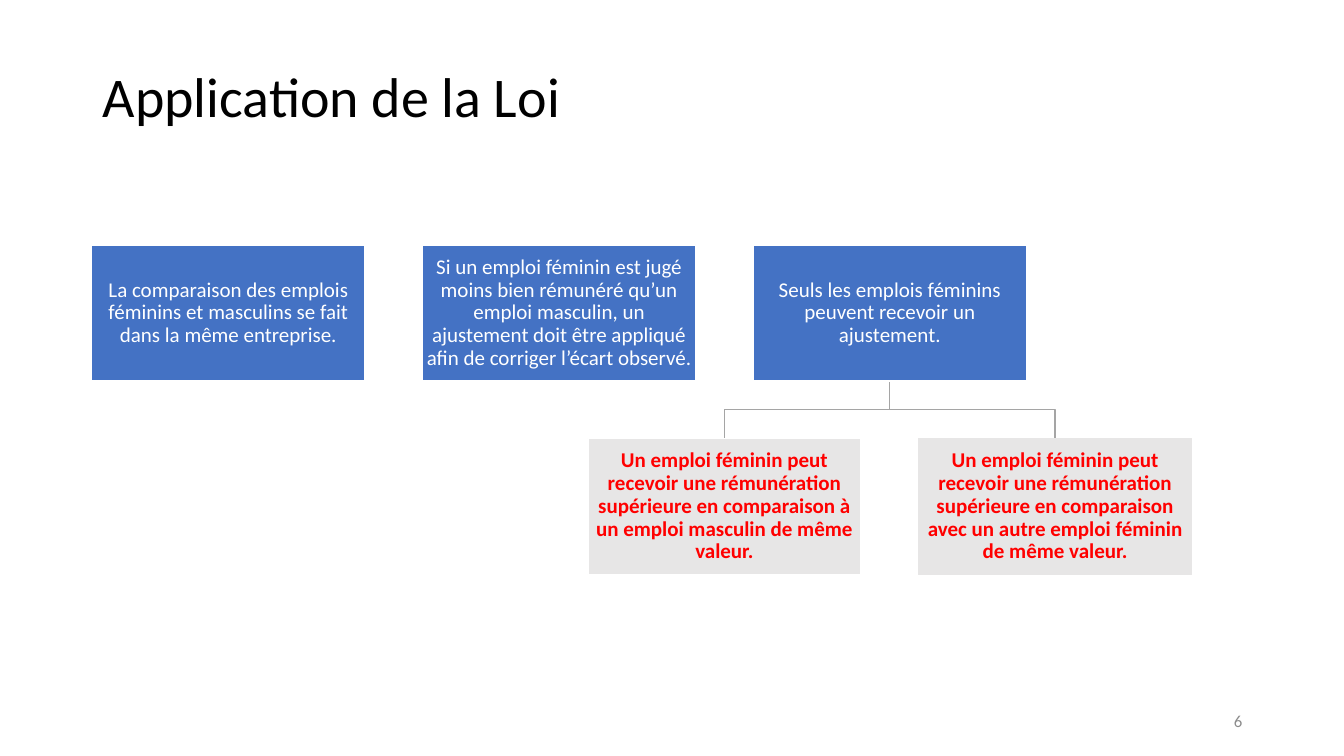
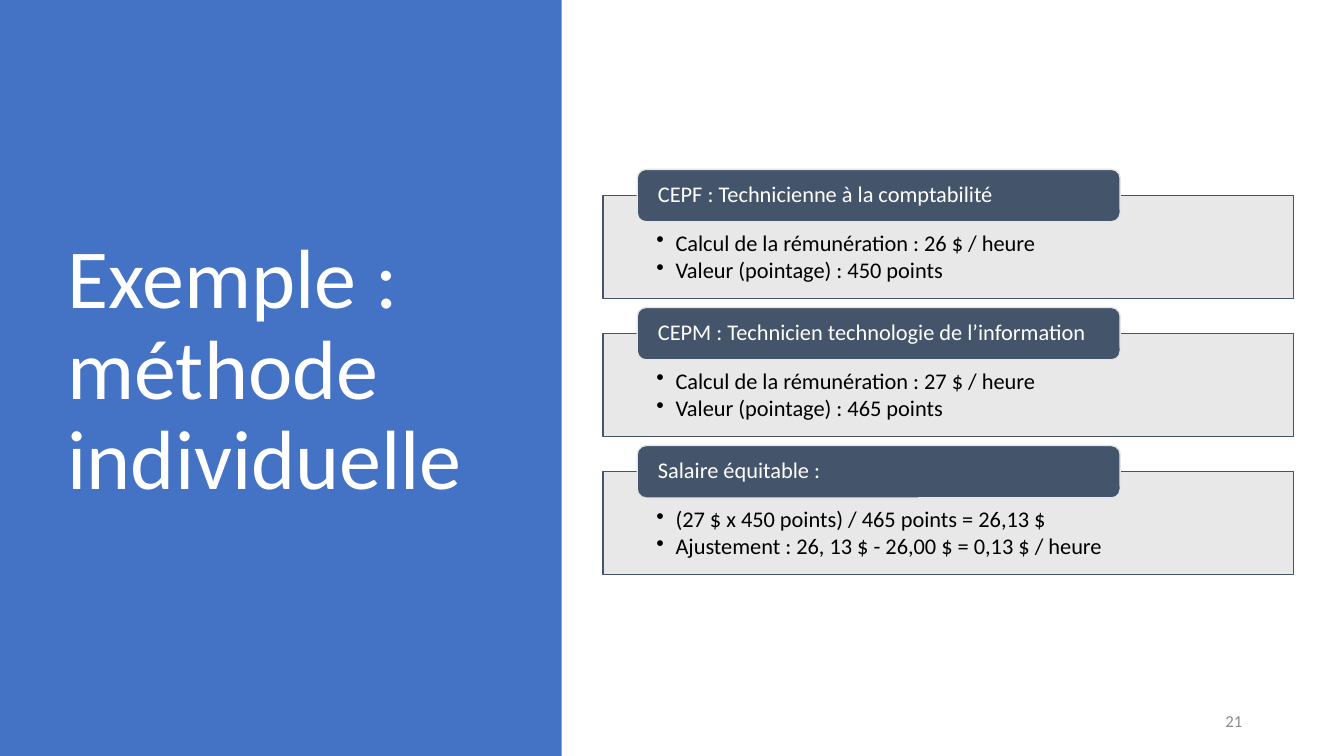
from lxml.etree import SubElement
from pptx import Presentation
from pptx.dml.color import RGBColor
from pptx.enum.shapes import MSO_SHAPE
from pptx.enum.text import MSO_ANCHOR, MSO_AUTO_SIZE, PP_ALIGN
from pptx.oxml.ns import qn
from pptx.util import Inches, Pt

BLUE = RGBColor(0x44, 0x72, 0xC4)
SLATE = RGBColor(0x44, 0x54, 0x6A)
LIGHT = RGBColor(0xE7, 0xE6, 0xE6)
GRAY = RGBColor(0xA5, 0xA5, 0xA5)
NUMBER_GRAY = RGBColor(0x8C, 0x8C, 0x8C)
RED = RGBColor(0xFF, 0x00, 0x00)
WHITE = RGBColor(0xFF, 0xFF, 0xFF)
BLACK = RGBColor(0x00, 0x00, 0x00)
FONT = "Calibri"
TITLE_ONLY = 5


def write(shape, *lines, size, color=BLACK, bold=False, align=PP_ALIGN.LEFT,
          anchor=MSO_ANCHOR.MIDDLE, insets=(0.1, 0.05, 0.1, 0.05),
          spacing=0.9, after=0, bullet=False):
    frame = shape.text_frame
    frame.word_wrap = True
    frame.auto_size = MSO_AUTO_SIZE.NONE
    frame.vertical_anchor = anchor
    (frame.margin_left, frame.margin_top,
     frame.margin_right, frame.margin_bottom) = map(Inches, insets)
    frame.text = "\n".join(lines)
    for paragraph in frame.paragraphs:
        paragraph.alignment = align
        paragraph.line_spacing = spacing
        paragraph.space_before = Pt(0)
        paragraph.space_after = Pt(after)
        font = paragraph.runs[0].font
        font.name, font.size, font.bold = FONT, Pt(size), bold
        font.color.rgb = color
        if bullet:
            properties = paragraph.runs[0].font and paragraph._p.get_or_add_pPr()
            properties.set("marL", str(Inches(0.19)))
            properties.set("indent", str(Inches(-0.19)))
            SubElement(properties, qn("a:buChar"), char="•")


class Deck:
    def __init__(self):
        self.presentation = Presentation()
        self.presentation.slide_width = Inches(13.33)
        self.presentation.slide_height = Inches(7.5)
        self.slide = None

    def new_slide(self, number):
        layout = self.presentation.slide_layouts[TITLE_ONLY]
        self.slide = self.presentation.slides.add_slide(layout)
        box = self.slide.shapes.add_textbox(*map(Inches, (9.42, 6.95, 3, 0.4)))
        write(box, str(number), size=12, color=NUMBER_GRAY,
              align=PP_ALIGN.RIGHT, spacing=1, after=6)

    def title(self, text, position, **style):
        title = self.slide.shapes.title
        title.left, title.top, title.width, title.height = map(Inches, position)
        write(title, text, **style)
        title.element.getparent().append(title.element)

    def box(self, position, fill, line=None, kind=MSO_SHAPE.RECTANGLE, opacity=100):
        shape = self.slide.shapes.add_shape(kind, *map(Inches, position))
        shape.shadow.inherit = False
        shape.fill.solid()
        shape.fill.fore_color.rgb = fill
        if opacity < 100:
            color = shape.element.spPr.find(qn("a:solidFill")).find(qn("a:srgbClr"))
            SubElement(color, qn("a:alpha"), val=str(opacity * 1000))
        if line is None:
            shape.line.fill.background()
        else:
            shape.line.color.rgb = line
            shape.line.width = Pt(1)
        return shape

    def branch(self, start_x, start_y, end_x, end_y):
        middle = (start_y + end_y) / 2
        builder = self.slide.shapes.build_freeform(
            Inches(start_x), Inches(start_y))
        corners = [(start_x, middle), (end_x, middle), (end_x, end_y)]
        builder.add_line_segments(
            [(Inches(x), Inches(y)) for x, y in corners], close=False)
        shape = builder.convert_to_shape()
        shape.shadow.inherit = False
        shape.fill.background()
        shape.line.color.rgb = GRAY
        shape.line.width = Pt(1)

    def tree_box(self, left, top, text, fill, line, **style):
        shape = self.box((left, top, 2.71, 1.35), fill, line)
        write(shape, text, size=15, align=PP_ALIGN.CENTER,
              insets=(0.01,) * 4, **style)

    def card(self, top, heading, *items):
        body = self.box((5.98, top + 0.26, 6.85, 1.02), LIGHT, SLATE, opacity=90)
        write(body, *items, size=16, anchor=MSO_ANCHOR.TOP,
              insets=(0.53, 0.36, 0.53, 0.12), after=2.4, bullet=True)
        tab = self.box((6.32, top, 4.79, 0.52), SLATE, LIGHT,
                       MSO_SHAPE.ROUNDED_RECTANGLE)
        write(tab, heading, size=16, color=WHITE, insets=(0.18, 0, 0.18, 0))


def law_slide(deck):
    deck.new_slide(6)
    deck.title("Application de la Loi", (0.92, 0.57, 11.12, 0.77),
               size=40, anchor=MSO_ANCHOR.BOTTOM)
    left, pitch, top, child_top = 0.91, 3.28, 2.43, 4.35
    rules = [
        "La comparaison des emplois féminins et masculins se fait dans la même entreprise.",
        "Si un emploi féminin est jugé moins bien rémunéré qu’un emploi masculin, "
        "un ajustement doit être appliqué afin de corriger l’écart observé.",
        "Seuls les emplois féminins peuvent recevoir un ajustement.",
    ]
    cases = [
        ("Un emploi féminin peut recevoir une rémunération supérieure "
         "en comparaison à un emploi masculin de même valeur.", WHITE),
        ("Un emploi féminin peut recevoir une rémunération supérieure "
         "en comparaison avec un autre emploi féminin de même valeur.", LIGHT),
    ]
    parent_left = left + 2 * pitch
    center = parent_left + 2.71 / 2
    offsets = (-pitch / 2, pitch / 2)
    for offset in offsets:
        deck.branch(center, top + 1.35, center + offset, child_top)
    for index, rule in enumerate(rules):
        deck.tree_box(left + index * pitch, top, rule, BLUE, WHITE, color=WHITE)
    for offset, (case, line) in zip(offsets, cases):
        deck.tree_box(parent_left + offset, child_top, case, LIGHT, line,
                      color=RED, bold=True)


def example_slide(deck):
    deck.new_slide(21)
    deck.box((0, 0, 5.57, 7.5), BLUE)
    deck.title("Exemple : méthode individuelle", (0.57, 0.68, 4.16, 6.02),
               size=60, color=WHITE)
    cards = [
        ("CEPF : Technicienne à la comptabilité",
         "Calcul de la rémunération : 26 $ / heure",
         "Valeur (pointage) : 450 points"),
        ("CEPM : Technicien technologie de l’information",
         "Calcul de la rémunération : 27 $ / heure",
         "Valeur (pointage) : 465 points"),
        ("Salaire équitable :",
         "(27 $ x 450 points) / 465 points = 26,13 $",
         "Ajustement : 26, 13 $ - 26,00 $ = 0,13 $ / heure"),
    ]
    for index, card in enumerate(cards):
        deck.card(1.68 + index * 1.37, *card)


def main():
    deck = Deck()
    law_slide(deck)
    example_slide(deck)
    deck.presentation.save("out.pptx")


if __name__ == "__main__":
    main()
